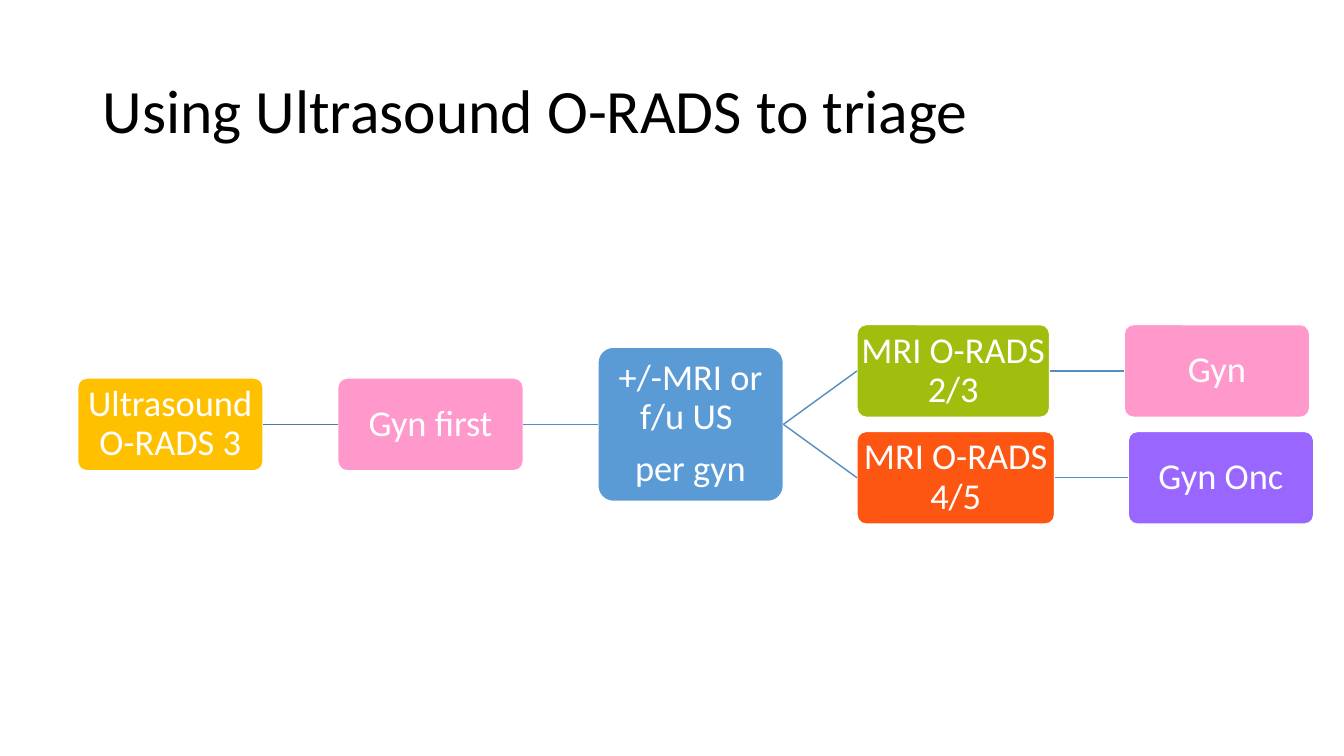
from dataclasses import dataclass

from lxml.etree import SubElement
from pptx import Presentation
from pptx.dml.color import RGBColor
from pptx.enum.shapes import MSO_CONNECTOR, MSO_SHAPE
from pptx.enum.text import MSO_ANCHOR, PP_ALIGN
from pptx.oxml.ns import qn
from pptx.shapes.autoshape import Shape
from pptx.slide import Slide
from pptx.text.text import TextFrame
from pptx.util import Inches, Pt


@dataclass(frozen=True)
class Theme:
    font: str = "Calibri"
    title_size: int = 44
    step_size: int = 26
    paragraph_gap: int = 9
    black: str = "000000"
    white: str = "FFFFFF"
    amber: str = "FFC000"
    pink: str = "FF99CC"
    blue: str = "5B9BD5"
    green: str = "A1BE0E"
    orange: str = "FD5613"
    purple: str = "9966FF"
    first_link: str = "497CAB"
    link: str = "538DC1"


@dataclass(frozen=True)
class Step:
    name: str
    text: str
    left: float
    middle: float
    fill: str
    width: float = 1.84
    height: float = 0.92


@dataclass(frozen=True)
class Link:
    start: str
    end: str
    color: str


THEME = Theme()
TRUNK, UPPER, LOWER = 4.21, 3.68, 4.74

STEPS = [
    Step("ultrasound", "Ultrasound O-RADS 3", 0.77, TRUNK, THEME.amber),
    Step("gyn first", "Gyn first", 3.35, TRUNK, THEME.pink),
    Step("follow-up", "+/-MRI or f/u US \nper gyn", 5.93, TRUNK, THEME.blue, height=1.53),
    Step("low risk", "MRI O-RADS 2/3", 8.5, UPPER, THEME.green, width=1.91),
    Step("gyn", "Gyn", 11.15, UPPER, THEME.pink),
    Step("high risk", "MRI O-RADS 4/5", 8.5, LOWER, THEME.orange, width=1.96),
    Step("gyn onc", "Gyn Onc", 11.19, LOWER, THEME.purple),
]

LINKS = [
    Link("ultrasound", "gyn first", THEME.first_link),
    Link("gyn first", "follow-up", THEME.link),
    Link("follow-up", "low risk", THEME.link),
    Link("low risk", "gyn", THEME.link),
    Link("follow-up", "high risk", THEME.link),
    Link("high risk", "gyn onc", THEME.link),
]


def write_text(frame: TextFrame, text: str, *, size: int, color: str, align: PP_ALIGN) -> None:
    frame.word_wrap = True
    frame.vertical_anchor = MSO_ANCHOR.MIDDLE
    for index, line in enumerate(text.split("\n")):
        para = frame.add_paragraph() if index else frame.paragraphs[0]
        para.alignment = align
        para.line_spacing = 0.9
        para.space_before = Pt(THEME.paragraph_gap if index else 0)
        span = para.add_run()
        span.text = line
        span.font.name = THEME.font
        span.font.size = Pt(size)
        span.font.color.rgb = RGBColor.from_string(color)


def draw_title(page: Slide, text: str) -> None:
    title = page.shapes.title
    title.left, title.top = Inches(0.92), Inches(0.4)
    title.width, title.height = Inches(11.5), Inches(1.45)
    write_text(title.text_frame, text, size=THEME.title_size, color=THEME.black, align=PP_ALIGN.LEFT)


def draw_step(page: Slide, step: Step) -> Shape:
    box = page.shapes.add_shape(
        MSO_SHAPE.ROUNDED_RECTANGLE,
        Inches(step.left), Inches(step.middle - step.height / 2),
        Inches(step.width), Inches(step.height),
    )
    box.adjustments[0] = 0.1
    box.shadow.inherit = False
    box.fill.solid()
    box.fill.fore_color.rgb = RGBColor.from_string(step.fill)
    box.line.color.rgb = RGBColor.from_string(THEME.white)
    box.line.width = Pt(1)
    frame = box.text_frame
    frame.margin_left = frame.margin_right = Inches(0.01)
    frame.margin_top = frame.margin_bottom = Inches(0.02)
    write_text(frame, step.text, size=THEME.step_size, color=THEME.white, align=PP_ALIGN.CENTER)
    return box


def draw_link(page: Slide, start: Shape, end: Shape, color: str) -> None:
    left_site, right_site = 1, 3
    line = page.shapes.add_connector(MSO_CONNECTOR.STRAIGHT, 0, 0, 0, 0)
    line.begin_connect(start, right_site)
    line.end_connect(end, left_site)
    line.line.color.rgb = RGBColor.from_string(color)
    line.line.width = Pt(1)
    SubElement(line._element.spPr, qn("a:effectLst"))


def main() -> None:
    deck = Presentation()
    deck.slide_width, deck.slide_height = Inches(13.33), Inches(7.5)
    page = deck.slides.add_slide(deck.slide_layouts.get_by_name("Title Only"))
    draw_title(page, "Using Ultrasound O-RADS to triage")
    boxes = {step.name: draw_step(page, step) for step in STEPS}
    for link in LINKS:
        draw_link(page, boxes[link.start], boxes[link.end], link.color)
    deck.save("out.pptx")


if __name__ == "__main__":
    main()
